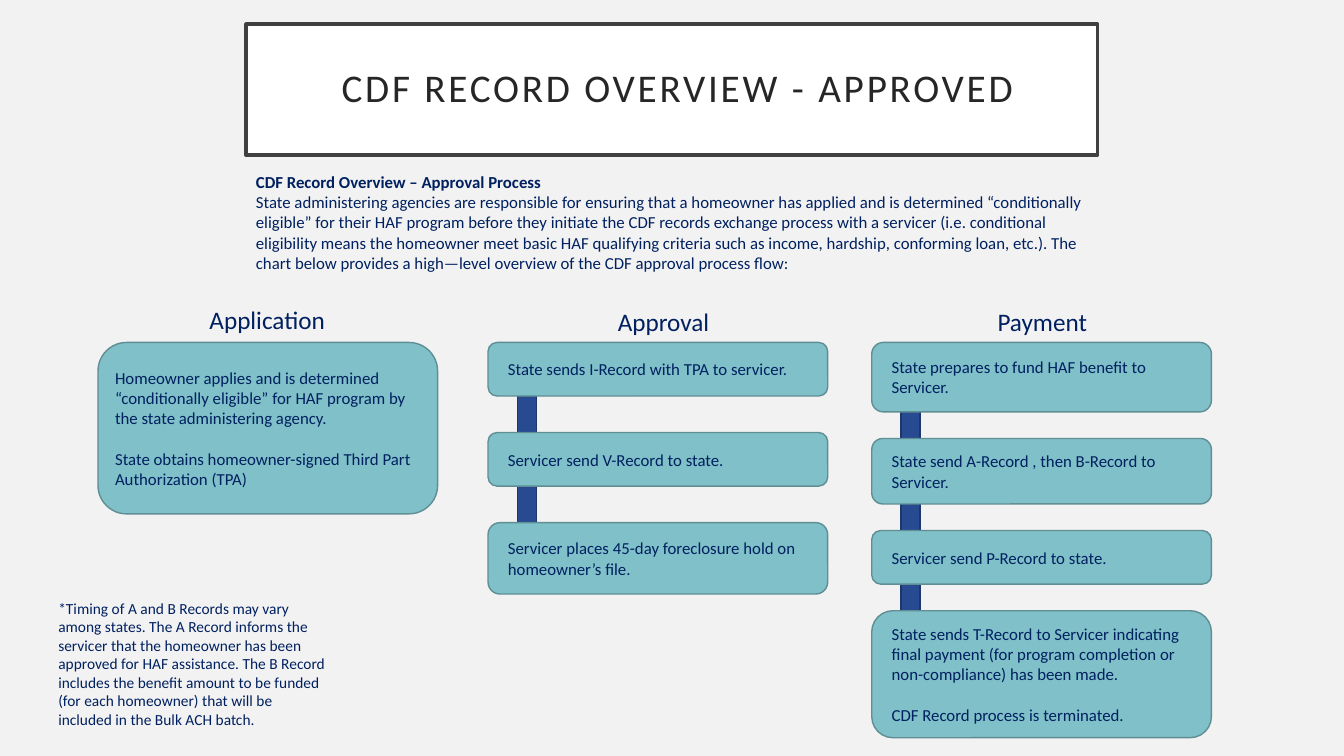
"""Build the slide on the approval flow of CDF records."""
from pptx import Presentation
from pptx.dml.color import RGBColor
from pptx.enum.shapes import MSO_SHAPE
from pptx.enum.text import MSO_ANCHOR, PP_ALIGN
from pptx.util import Cm, Pt

RECTANGLE, ROUNDED = MSO_SHAPE.RECTANGLE, MSO_SHAPE.ROUNDED_RECTANGLE
TOP, MIDDLE = MSO_ANCHOR.TOP, MSO_ANCHOR.MIDDLE
LEFT, CENTER = PP_ALIGN.LEFT, PP_ALIGN.CENTER

FONT = "Calibri"
NAVY = "002060"
TITLE = "CDF RECORD OVERVIEW - APPROVED"
INTRO = [
    "CDF Record Overview – Approval Process",
    "State administering agencies are responsible for ensuring that a homeowner has applied and is "
    "determined “conditionally eligible” for their HAF program before they initiate the CDF records "
    "exchange process with a servicer (i.e. conditional eligibility means the homeowner meet basic HAF "
    "qualifying criteria such as income, hardship, conforming loan, etc.). The chart below provides a "
    "high—level overview of the CDF approval process flow:",
]
NOTE = [
    "*Timing of A and B Records may vary among states. The A Record informs the servicer that the "
    "homeowner has been approved for HAF assistance. The B Record includes the benefit amount to be "
    "funded (for each homeowner) that will be included in the Bulk ACH batch."
]
COLUMNS = [
    {
        "heading": "Application", "heading_at": (5.03, 7.54),
        "left": 2.47, "gap": 0, "margins": (0.43, 0.58), "bar_start": 0,
        "cards": [
            (4.32, ["Homeowner applies and is determined “conditionally eligible” for HAF program by "
                    "the state administering agency.",
                    "State obtains homeowner-signed Third Part Authorization (TPA)"]),
        ],
    },
    {
        "heading": "Approval", "heading_at": (15.32, 7.59),
        "left": 12.3, "gap": 0.92, "margins": (0.5, 0.5), "bar_start": 0.56,
        "cards": [
            (1.35, ["State sends I-Record with TPA to servicer."]),
            (1.35, ["Servicer send V-Record to state."]),
            (1.8, ["Servicer places 45-day foreclosure hold on homeowner’s file."]),
        ],
    },
    {
        "heading": "Payment", "heading_at": (24.89, 7.59),
        "left": 21.97, "gap": 0.67, "margins": (0.5, 0.5), "bar_start": 1.35,
        "cards": [
            (1.75, ["State prepares to fund HAF benefit to Servicer."]),
            (1.65, ["State send A-Record , then B-Record to Servicer."]),
            (1.35, ["Servicer send P-Record to state."]),
            (3.2, ["State sends T-Record to Servicer indicating final payment (for program completion "
                   "or non-compliance) has been made.",
                   "CDF Record process is terminated."]),
        ],
    },
]
HEADING_WIDTH, HEADING_HEIGHT = 3.8, 1.02
CARD_TOP, CARD_WIDTH = 8.63, 8.56
BAR_INSET, BAR_WIDTH, BAR_OVERLAP = 0.74, 0.48, 0.4
CORNER = 0.1667
CORNER_TEXT_INSET = 0.29


def color(value):
    return RGBColor.from_string(value)


def write(shape, lines, size=12, fill=NAVY, align=LEFT, anchor=TOP,
          bold_first=False, gap=0, margins=(0.25, 0.13, 0.25, 0.13)):
    frame = shape.text_frame
    frame.word_wrap = True
    frame.vertical_anchor = anchor
    frame.margin_left, frame.margin_top, frame.margin_right, frame.margin_bottom = map(Cm, margins)
    for index, line in enumerate(lines):
        para = frame.add_paragraph() if index else frame.paragraphs[0]
        para.alignment = align
        para.space_before = Pt(gap if index else 0)
        span = para.add_run()
        span.text = line
        span.font.name, span.font.size = FONT, Pt(size)
        span.font.bold = bold_first and index == 0
        span.font.color.rgb = color(fill)
    return frame


def paint(shape, fill, line, width):
    shape.fill.solid()
    shape.fill.fore_color.rgb = color(fill)
    shape.line.color.rgb = color(line)
    shape.line.width = Pt(width)


def add_box(page, kind, place, fill, line):
    box = page.shapes.add_shape(kind, *map(Cm, place))
    box.shadow.inherit = False
    paint(box, fill, line, 1)
    return box


def add_text(page, place, lines, **style):
    write(page.shapes.add_textbox(*map(Cm, place)), lines, **style)


def add_title(page):
    title = page.shapes.title
    title.left, title.top, title.width, title.height = map(Cm, (6.2, 0.61, 21.46, 3.3))
    paint(title, "FFFFFF", "404040", 2.5)
    frame = write(title, [TITLE], size=28, fill="262626", align=CENTER, anchor=MIDDLE,
                  margins=(0.8, 0.51, 0.51, 0.51))
    para = frame.paragraphs[0]
    para.line_spacing = 0.9
    para.runs[0].font._element.set("spc", "200")


def add_column(page, column):
    left, cards = column["left"], column["cards"]
    heights = [height for height, _ in cards]
    tops = [CARD_TOP + sum(heights[:index]) + index * column["gap"] for index in range(len(cards))]
    if len(cards) > 1:
        start = CARD_TOP + column["bar_start"]
        end = tops[-1] + BAR_OVERLAP
        add_box(page, RECTANGLE, (left + BAR_INSET, start, BAR_WIDTH, end - start), "284A91", "1E376B")
    add_text(page, (*column["heading_at"], HEADING_WIDTH, HEADING_HEIGHT), [column["heading"]], size=18)
    for top, (height, lines) in zip(tops, cards):
        card = add_box(page, ROUNDED, (left, top, CARD_WIDTH, height), "80C0C8", "5F8E94")
        card.adjustments[0] = CORNER
        inset = CORNER * height * CORNER_TEXT_INSET
        near, far = (margin - inset for margin in column["margins"])
        write(card, lines, anchor=MIDDLE, gap=14.5, margins=(near, 0, far, 0))


def main():
    deck = Presentation()
    deck.slide_width, deck.slide_height = Cm(33.87), Cm(19.05)
    page = deck.slides.add_slide(deck.slide_layouts[5])
    page.background.fill.solid()
    page.background.fill.fore_color.rgb = color("F2F2F2")
    add_title(page)
    add_text(page, (6.2, 4.2, 21.46, 2.82), INTRO, bold_first=True)
    for column in COLUMNS:
        add_column(page, column)
    add_text(page, (1.22, 14.96, 7.29, 3.56), NOTE, size=11)
    deck.save("out.pptx")


if __name__ == "__main__":
    main()
